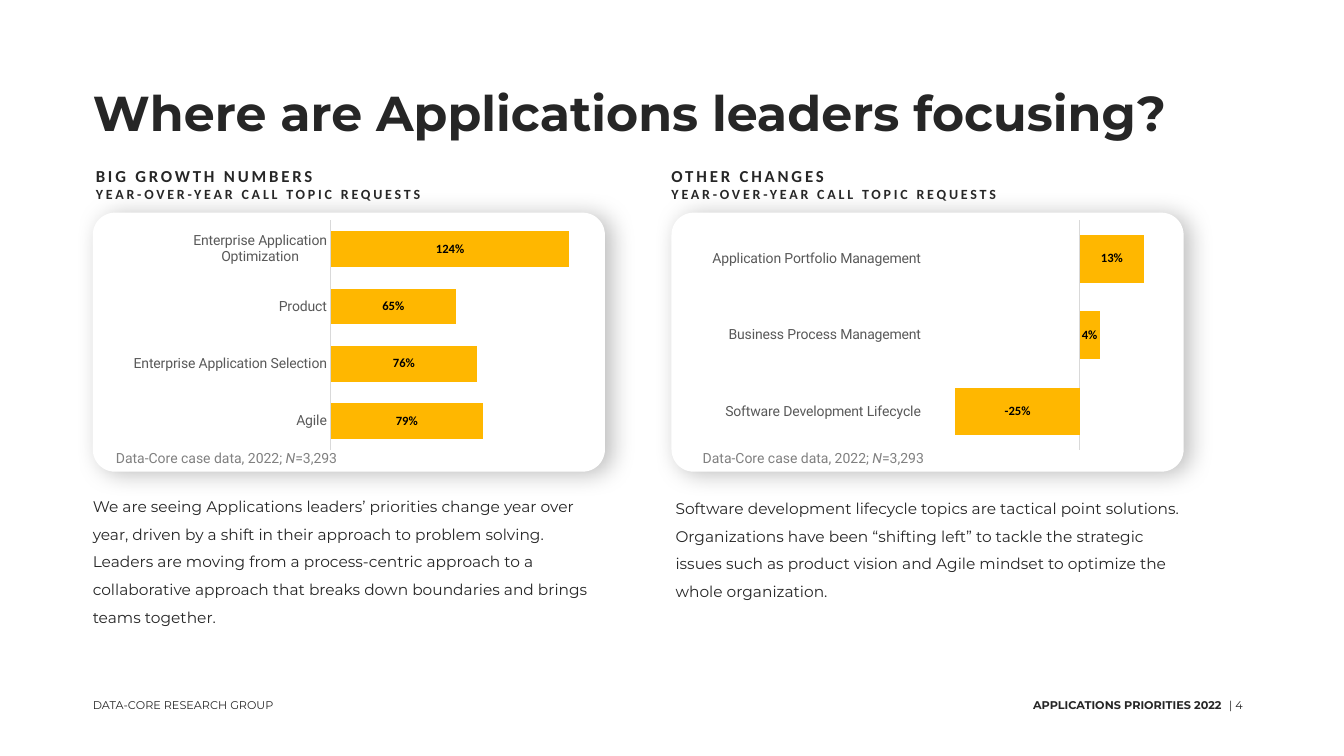
from lxml import etree
from pptx import Presentation
from pptx.chart.data import CategoryChartData
from pptx.dml.color import RGBColor
from pptx.enum.chart import XL_CHART_TYPE, XL_LABEL_POSITION, XL_TICK_LABEL_POSITION, XL_TICK_MARK
from pptx.enum.shapes import MSO_SHAPE
from pptx.enum.text import MSO_ANCHOR, PP_ALIGN
from pptx.oxml.ns import qn
from pptx.util import Inches, Pt

STACKED_BAR = XL_CHART_TYPE.BAR_STACKED
CENTER_LABEL = XL_LABEL_POSITION.CENTER
LOW, NEXT_TO_AXIS = XL_TICK_LABEL_POSITION.LOW, XL_TICK_LABEL_POSITION.NEXT_TO_AXIS
NO_TICK = XL_TICK_MARK.NONE
ROUNDED = MSO_SHAPE.ROUNDED_RECTANGLE
TOP, BOTTOM = MSO_ANCHOR.TOP, MSO_ANCHOR.BOTTOM
LEFT, RIGHT = PP_ALIGN.LEFT, PP_ALIGN.RIGHT

COLORS = {
    "ink": "262626",
    "white": "FFFFFF",
    "black": "000000",
    "bar": "FFB700",
    "label": "595959",
    "axis": "D9D9D9",
    "source": "808080",
}
COLUMN_WIDTH = 5.08
CARD_TOP, CARD_HEIGHT = 2.11, 2.57


def color(name):
    """Return the named palette colour."""
    return RGBColor.from_string(COLORS[name])


def style_font(font, size, face, tint="ink", bold=False):
    """Set size, face, colour and weight of a font."""
    font.size, font.name, font.bold = Pt(size), face, bold
    font.color.rgb = color(tint)


def add_box(page, left, top, width, height, anchor=TOP):
    """Add a wrapping text box without margins and return its text frame."""
    box = page.shapes.add_textbox(Inches(left), Inches(top), Inches(width), Inches(height))
    frame = box.text_frame
    frame.word_wrap = True
    frame.vertical_anchor = anchor
    frame.margin_left = frame.margin_right = frame.margin_top = frame.margin_bottom = 0
    return frame


def add_text(page, area, text, size, bold=False, align=LEFT, spacing=None, anchor=TOP):
    """Add one paragraph of Montserrat text."""
    para = add_box(page, *area, anchor).paragraphs[0]
    para.text = text
    para.alignment = align
    para.line_spacing = spacing
    style_font(para.font, size, "Montserrat", bold=bold)


def add_heading(page, left, title, subtitle):
    """Add a letter-spaced heading of two lines."""
    frame = add_box(page, left, 1.62, COLUMN_WIDTH, 0.24)
    lines = [(title, 12, 16), (subtitle, 10, 12)]
    for index, (text, size, leading) in enumerate(lines):
        para = frame.add_paragraph() if index else frame.paragraphs[0]
        span = para.add_run()
        span.text = text
        span.font._element.set("spc", "200")
        para.line_spacing = Pt(leading)
        style_font(para.font, size, "Calibri", bold=True)


def add_shadow(shape, tint, opacity, blur, distance, angle):
    """Give a shape an outer shadow."""
    shape.shadow.inherit = False
    effects = shape._element.spPr.find(qn("a:effectLst"))
    shadow = etree.SubElement(
        effects, qn("a:outerShdw"), blurRad=str(Pt(blur)), dist=str(Pt(distance)),
        dir=str(angle * 60000), algn="ctr", rotWithShape="0")
    fill = etree.SubElement(shadow, qn("a:srgbClr"), val=COLORS[tint])
    etree.SubElement(fill, qn("a:alpha"), val=str(opacity * 1000))


def add_card(page, left):
    """Add a raised white card built from a light and a dark shadow layer."""
    layers = [(180, ("white", 75, 10, 4.4, 235)), (0, ("black", 25, 17.1, 4.8, 17))]
    for rotation, shadow in layers:
        card = page.shapes.add_shape(
            ROUNDED, Inches(left), Inches(CARD_TOP), Inches(COLUMN_WIDTH), Inches(CARD_HEIGHT))
        card.adjustments[0] = 0.086
        card.rotation = rotation
        card.fill.solid()
        card.fill.fore_color.rgb = color("white")
        card.line.fill.background()
        add_shadow(card, *shadow)


def add_bar_chart(page, left, values, limits, label_position):
    """Add a bar chart of year-over-year changes."""
    data = CategoryChartData(number_format="0%")
    data.categories = list(values)
    data.add_series("Series 1", list(values.values()))
    chart = page.shapes.add_chart(
        STACKED_BAR, Inches(left), Inches(2.14), Inches(4.82), Inches(2.37), data).chart
    chart.has_legend = chart.has_title = False
    style_font(chart.font, 10, "Calibri", "black")

    topics = chart.category_axis
    topics.major_tick_mark = topics.minor_tick_mark = NO_TICK
    topics.tick_label_position = label_position
    topics.has_major_gridlines = False
    topics.format.line.color.rgb = color("axis")
    topics.format.line.width = Pt(0.75)
    style_font(topics.tick_labels.font, 10, "Roboto", "label")

    scale = chart.value_axis
    scale.visible = scale.has_major_gridlines = False
    scale.minimum_scale, scale.maximum_scale = limits

    plot = chart.plots[0]
    plot.gap_width, plot.overlap = 60, 100
    plot.vary_by_categories = False
    series = plot.series[0]
    series.invert_if_negative = False
    series.format.fill.solid()
    series.format.fill.fore_color.rgb = color("bar")
    labels = series.data_labels
    labels.show_value = True
    labels.position = CENTER_LABEL
    labels.number_format, labels.number_format_is_linked = "0%", False
    style_font(labels.font, 9, "Calibri", "black", bold=True)


def add_source(page, left):
    """Add the data source line with an italic N."""
    para = add_box(page, left, 4.46, 2.34, 0.41).paragraphs[0]
    for text, italic in [("Data-Core case data, 2022; ", False), ("N", True), ("=3,293", False)]:
        span = para.add_run()
        span.text = text
        span.font.italic = italic
    style_font(para.font, 10, "Roboto", "source")


def main():
    """Build the slide and save the deck."""
    deck = Presentation()
    deck.slide_width, deck.slide_height = Inches(13.33), Inches(7.5)
    page = deck.slides.add_slide(deck.slide_layouts[6])

    add_text(page, (0.92, 0.7, 10.78, 0.7), "Where are Applications leaders focusing?", 35,
             bold=True, spacing=0.8, anchor=BOTTOM)

    subtitle = "YEAR-OVER-YEAR CALL TOPIC REQUESTS"
    growth = {
        "Agile": 0.79,
        "Enterprise Application Selection": 0.76,
        "Product": 0.65,
        "Enterprise Application Optimization": 1.24,
    }
    add_heading(page, 0.95, "BIG GROWTH NUMBERS", subtitle)
    add_card(page, 0.92)
    add_bar_chart(page, 1.23, growth, (0, 1.4), NEXT_TO_AXIS)
    add_source(page, 1.15)
    add_text(page, (0.92, 4.84, COLUMN_WIDTH, 1.4),
             "We are seeing Applications leaders’ priorities change year over year, driven by a "
             "shift in their approach to problem solving. Leaders are moving from a "
             "process-centric approach to a collaborative approach that breaks down boundaries "
             "and brings teams together.", 11, spacing=1.5)

    changes = {
        "Software Development Lifecycle": -0.25,
        "Business Process Management": 0.04,
        "Application Portfolio Management": 0.13,
    }
    add_heading(page, 6.66, "OTHER CHANGES", subtitle)
    add_card(page, 6.66)
    add_bar_chart(page, 6.97, changes, (-0.3, 0.2), LOW)
    add_source(page, 6.97)
    add_text(page, (6.7, 4.86, COLUMN_WIDTH, 1.24),
             "Software development lifecycle topics are tactical point solutions. Organizations "
             "have been “shifting left” to tackle the strategic issues such as product vision "
             "and Agile mindset to optimize the whole organization.", 11, spacing=1.5)

    add_text(page, (0.92, 6.93, 2.15, 0.13), "DATA-CORE RESEARCH GROUP", 8)
    add_text(page, (9.51, 6.93, 2.61, 0.13), "APPLICATIONS PRIORITIES 2022", 8,
             bold=True, align=RIGHT)
    add_text(page, (12.19, 6.93, 0.49, 0.13), "| 4", 8)
    deck.save("out.pptx")


if __name__ == "__main__":
    main()
